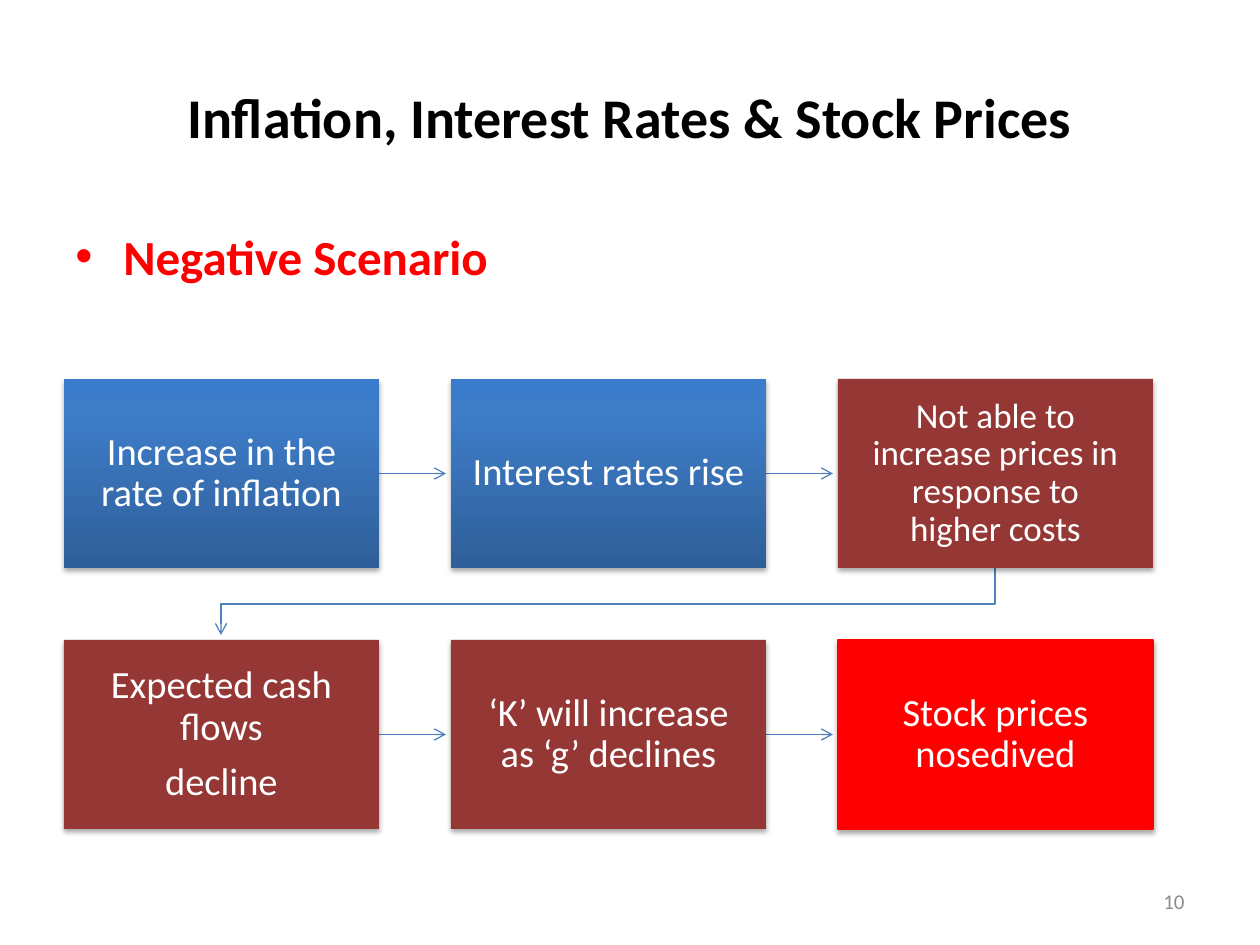
from copy import deepcopy
from dataclasses import dataclass

from lxml import etree
from pptx import Presentation
from pptx import util as u
from pptx.dml.color import RGBColor
from pptx.enum import shapes, text
from pptx.oxml import parse_xml
from pptx.oxml.ns import nsdecls, qn

SCALE = 914400 / 126  # EMU per px
FONT = "Calibri"
BLACK = RGBColor(0x00, 0x00, 0x00)
WHITE = RGBColor(0xFF, 0xFF, 0xFF)
RED = RGBColor(0xFF, 0x00, 0x00)
MAROON = RGBColor(0x95, 0x37, 0x35)
GREY = RGBColor(0x8C, 0x8C, 0x8C)
ARROW_BLUE = RGBColor(0x4F, 0x81, 0xBD)
BLUE_STOPS = (
    (0, RGBColor(0x2F, 0x5F, 0x99)),
    (0.8, RGBColor(0x3D, 0x7C, 0xC7)),
    (1, RGBColor(0x3A, 0x7C, 0xCB)),
)

# Grid of steps
LEFT, TOP = 64, 379
STEP_W, STEP_H = 315, 189
PITCH_X, PITCH_Y = 387, 261
ARROW_GAP = 5
COLUMNS = 3


@dataclass
class Step:
    lines: tuple[str, ...]
    fill: RGBColor | None = MAROON  # None means the blue gradient
    outline: RGBColor | None = None
    size: int = 22
    inset: int = 21
    gap: float = 7.7


STEPS = (
    Step(("Increase in the rate of inflation",), fill=None),
    Step(("Interest rates rise",), fill=None),
    Step(("Not able to increase prices in response to", "higher costs"),
         size=20, inset=20, gap=0),
    Step(("Expected cash flows", "decline")),
    Step(("‘K’ will increase as ‘g’ declines",)),
    Step(("Stock prices nosedived",), fill=RED, outline=RED),
)


def px(value: float) -> u.Emu:
    return u.Emu(round(value * SCALE))


def add_span(para, words: str, size: int, color: RGBColor, bold: bool = False) -> None:
    span = para.add_run()
    span.text = words
    span.font.name = FONT
    span.font.size = u.Pt(size)
    span.font.bold = bold
    span.font.color.rgb = color


def add_label(page, area: tuple[int, int, int, int], words: str, size: int,
              color: RGBColor, align, anchor, bold: bool = False):
    box = page.shapes.add_textbox(*map(px, area))
    box.text_frame.word_wrap = True
    box.text_frame.vertical_anchor = anchor
    para = box.text_frame.paragraphs[0]
    para.alignment = align
    add_span(para, words, size, color, bold)
    return para


def add_bullet(para, indent: int) -> None:
    props = para._p.get_or_add_pPr()
    props.set("marL", str(px(indent)))
    props.set("indent", str(-px(indent)))
    etree.SubElement(props, qn("a:buFont")).set("typeface", "Arial")
    etree.SubElement(props, qn("a:buChar")).set("char", "•")


def fill_gradient(shape) -> None:
    shape.fill.gradient()
    shape.fill.gradient_angle = 90
    stop_list = shape._element.spPr.find(qn("a:gradFill")).find(qn("a:gsLst"))
    stop_list.append(deepcopy(stop_list[-1]))
    for stop, (position, color) in zip(shape.fill.gradient_stops, BLUE_STOPS):
        stop.position = position
        stop.color.rgb = color


def add_shadow(shape) -> None:
    shape.shadow.inherit = False
    shape._element.spPr.find(qn("a:effectLst")).append(parse_xml(
        f'<a:outerShdw {nsdecls("a")} blurRad="40000" dist="23000" dir="5400000" '
        'rotWithShape="0"><a:srgbClr val="000000"><a:alpha val="35000"/>'
        '</a:srgbClr></a:outerShdw>'))


def add_step(page, step: Step, left: int, top: int) -> None:
    box = page.shapes.add_shape(shapes.MSO_SHAPE.RECTANGLE,
                                *map(px, (left, top, STEP_W, STEP_H)))
    if step.fill is None:
        fill_gradient(box)
    else:
        box.fill.solid()
        box.fill.fore_color.rgb = step.fill
    if step.outline is None:
        box.line.fill.background()
    else:
        box.line.color.rgb = step.outline
        box.line.width = u.Pt(0.75)
    add_shadow(box)

    frame = box.text_frame
    frame.word_wrap = True
    frame.vertical_anchor = text.MSO_ANCHOR.MIDDLE
    frame.margin_left = frame.margin_right = px(step.inset)
    frame.margin_top = frame.margin_bottom = px(step.inset)
    for index, line in enumerate(step.lines):
        para = frame.paragraphs[0] if index == 0 else frame.add_paragraph()
        para.alignment = text.PP_ALIGN.CENTER
        para.line_spacing = 0.9
        para.space_before = u.Pt(step.gap if index else 0)
        add_span(para, line, step.size, WHITE)


def style_arrow(arrow) -> None:
    arrow.line.color.rgb = ARROW_BLUE
    arrow.line.width = u.Pt(0.75)
    etree.SubElement(arrow.line._get_or_add_ln(), qn("a:tailEnd")).set("type", "arrow")
    etree.SubElement(arrow._element.spPr, qn("a:effectLst"))


def add_straight_arrow(page, left: int, top: int) -> None:
    start, middle = left + STEP_W, top + STEP_H / 2
    end = left + PITCH_X - ARROW_GAP
    style_arrow(page.shapes.add_connector(
        shapes.MSO_CONNECTOR.STRAIGHT, px(start), px(middle), px(end), px(middle)))


def add_return_arrow(page, left: int, top: int) -> None:
    start_x, end_x = left + STEP_W // 2, LEFT + STEP_W // 2
    start_y, end_y = top + STEP_H, top + PITCH_Y - ARROW_GAP
    bend_y = (top + STEP_H + top + PITCH_Y) // 2
    builder = page.shapes.build_freeform(start_x, start_y, scale=SCALE)
    builder.add_line_segments(
        ((start_x, bend_y), (end_x, bend_y), (end_x, end_y)), close=False)
    arrow = builder.convert_to_shape()
    arrow.fill.background()
    style_arrow(arrow)


def main() -> None:
    deck = Presentation()
    deck.slide_width, deck.slide_height = px(1260), px(945)
    page = deck.slides.add_slide(deck.slide_layouts[6])

    # Heading and bullet
    add_label(page, (63, 38, 1134, 157), "Inflation, Interest Rates & Stock Prices", 32,
              BLACK, text.PP_ALIGN.CENTER, text.MSO_ANCHOR.MIDDLE, bold=True)
    scenario = add_label(page, (63, 220, 1134, 84), "Negative Scenario", 28,
                         RED, text.PP_ALIGN.LEFT, text.MSO_ANCHOR.TOP, bold=True)
    add_bullet(scenario, 48)

    # Process steps, each followed by the arrow to the next
    for index, step in enumerate(STEPS):
        row, column = divmod(index, COLUMNS)
        left, top = LEFT + column * PITCH_X, TOP + row * PITCH_Y
        if column < COLUMNS - 1:
            add_straight_arrow(page, left, top)
        elif index < len(STEPS) - 1:
            add_return_arrow(page, left, top)
        add_step(page, step, left, top)

    # Page number
    add_label(page, (903, 876, 294, 50), "10", 12, GREY,
              text.PP_ALIGN.RIGHT, text.MSO_ANCHOR.MIDDLE)

    deck.save("out.pptx")


if __name__ == "__main__":
    main()
